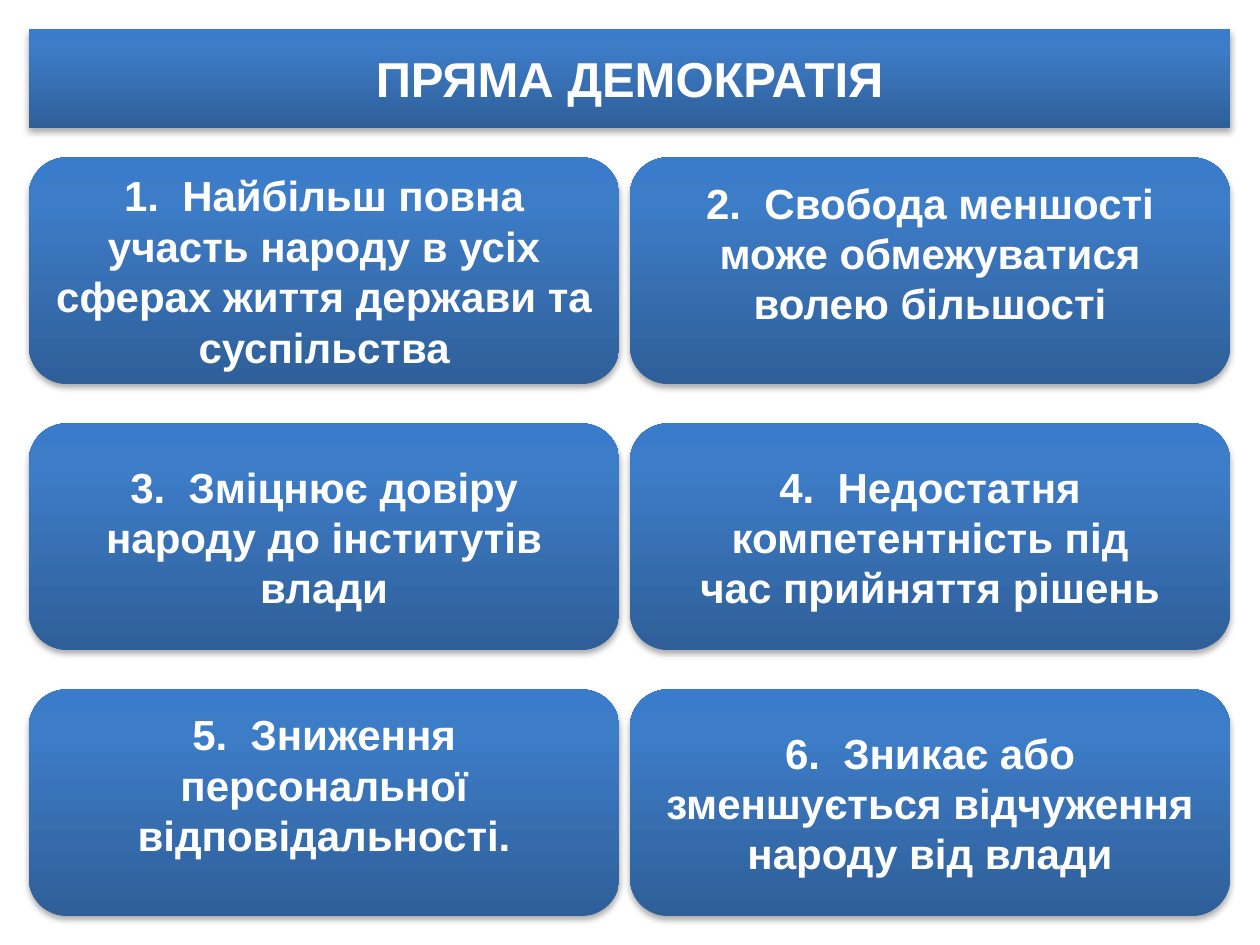
import pptx
import pptx.dml.color
import pptx.enum.shapes
import pptx.enum.text
import pptx.oxml
import pptx.oxml.ns
import pptx.util

Pt = pptx.util.Pt
STOPS = [(0, "2F5F99"), (80, "3D7CC7"), (100, "3A7CCB")]
LEFT, TOP, WIDTH = 16.5, 16.5, 686.5
COLUMNS = [(LEFT, 337.5), (360, 343)]
FIRST_ROW, ROW_STEP, CARD_HEIGHT = 90, 152, 129.5
EXTRA_BOTTOM = 24.3
POINTS = [
    ("1.  Найбільш повна участь народу в усіх сферах життя держави та суспільства", 3.6),
    ("2.  Свобода меншості може обмежуватися волею більшості", EXTRA_BOTTOM),
    ("3.  Зміцнює довіру народу до інститутів влади", 3.6),
    ("4.  Недостатня компетентність під\nчас прийняття рішень", 3.6),
    ("5.  Зниження персональної відповідальності.", EXTRA_BOTTOM),
    ("6.  Зникає або зменшується відчуження народу від влади", 3.6),
]


def rgb(value):
    """Return the colour for a hex string."""
    return pptx.dml.color.RGBColor.from_string(value)


def element(tag, content):
    """Return a drawing element with the given attributes and children."""
    ns = pptx.oxml.ns.nsdecls("a")
    return pptx.oxml.parse_xml(f"<a:{tag} {ns}{content}</a:{tag.split()[0]}>")


def style_panel(s):
    """Give a shape the vertical gradient, no outline and the soft shadow."""
    stops = "".join(
        f'<a:gs pos="{pos * 1000}"><a:srgbClr val="{rgb(color)}"/></a:gs>'
        for pos, color in STOPS)
    s.element.spPr.append(element(
        "gradFill",
        f' rotWithShape="1"><a:gsLst>{stops}</a:gsLst><a:lin ang="16200000" scaled="0"/>'))
    s.line.fill.background()
    s.shadow.inherit = False
    effects = s.element.spPr.find(pptx.oxml.ns.qn("a:effectLst"))
    effects.append(element(
        "outerShdw",
        f' blurRad="{Pt(3.5)}" dist="{Pt(2.2)}" dir="5400000" rotWithShape="0">'
        '<a:srgbClr val="000000"><a:alpha val="32000"/></a:srgbClr>'))


def write_text(s, text, size, bottom=3.6):
    """Write centred bold white text in a shape."""
    tf = s.text_frame
    tf.text = text
    tf.word_wrap = True
    tf.auto_size = pptx.enum.text.MSO_AUTO_SIZE.NONE
    tf.vertical_anchor = pptx.enum.text.MSO_ANCHOR.MIDDLE
    tf.margin_bottom = Pt(bottom)
    for p in tf.paragraphs:
        p.alignment = pptx.enum.text.PP_ALIGN.CENTER
        for r in p.runs:
            r.font.name = "Arial"
            r.font.size = Pt(size)
            r.font.bold = True
            r.font.color.rgb = rgb("FFFFFF")


def add_title(slide, text):
    """Turn the title placeholder into the rounded heading bar."""
    s = slide.shapes.title
    s.left, s.top, s.width, s.height = Pt(LEFT), Pt(TOP), Pt(WIDTH), Pt(56.5)
    s.element.spPr.append(element("prstGeom", ' prst="roundRect"><a:avLst/>'))
    style_panel(s)
    write_text(s, text, 28)


def add_card(slide, x, y, width, text, bottom):
    """Add one rounded card with its numbered statement."""
    s = slide.shapes.add_shape(
        pptx.enum.shapes.MSO_SHAPE.ROUNDED_RECTANGLE,
        Pt(x), Pt(y), Pt(width), Pt(CARD_HEIGHT))
    style_panel(s)
    write_text(s, text, 24, bottom)


def main():
    """Build the slide and save it."""
    prs = pptx.Presentation()
    prs.slide_width, prs.slide_height = Pt(720), Pt(540)
    slide = prs.slides.add_slide(prs.slide_layouts[5])
    add_title(slide, "ПРЯМА ДЕМОКРАТІЯ")
    for i, (text, bottom) in enumerate(POINTS):
        row, col = divmod(i, 2)
        x, width = COLUMNS[col]
        add_card(slide, x, FIRST_ROW + row * ROW_STEP, width, text, bottom)
    prs.save("out.pptx")


if __name__ == "__main__":
    main()
